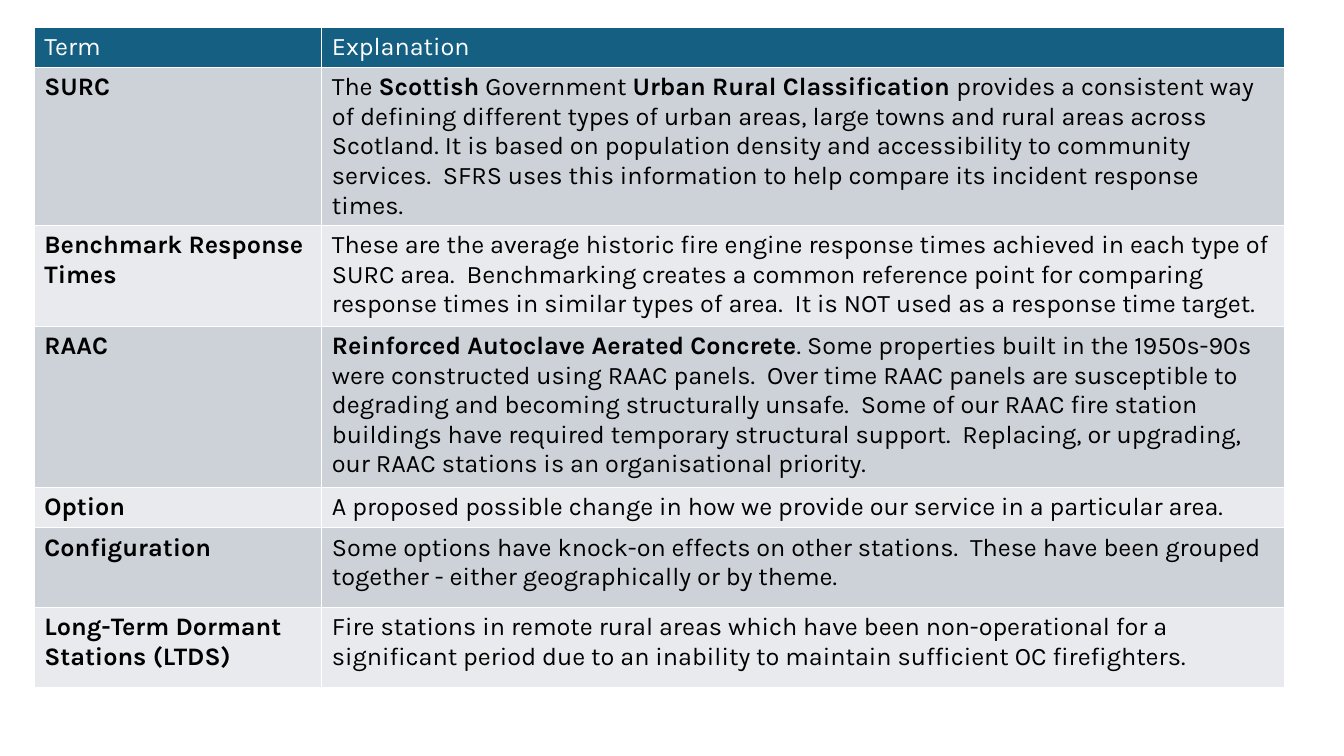
import pptx
import pptx.dml.color
import pptx.oxml
import pptx.oxml.ns
import pptx.util
from dataclasses import dataclass


@dataclass(frozen=True)
class Theme:
    font: str = "Karla"
    size: int = 18
    header_fill: str = "156082"
    header_text: str = "FFFFFF"
    bands: tuple = ("CCD2D8", "E8EAED")
    text: str = "000000"
    border: str = "FFFFFF"
    border_pt: float = 1


THEME = Theme()
WIDTH, HEIGHT = 13.33, 7.5
GLOSSARY_BOX = (0.34, 0.27, 12.4, 6.32)
TERM_SHARE = 0.23
HEADINGS = ("Term", "Explanation")
HEADER_HEIGHT = 0.4

# Row height, term, explanation; ** switches bold on and off
ENTRIES = [
    (1.34, "SURC",
     "The **Scottish** Government **Urban Rural Classification **provides a "
     "consistent way of defining different types of urban areas, large towns "
     "and rural areas across Scotland. It is based on population density and "
     "accessibility to community services.  SFRS uses this information to "
     "help compare its incident response times."),
    (1.0, "Benchmark Response Times",
     "These are the average historic fire engine response times achieved in "
     "each type of SURC area.  Benchmarking creates a common reference point "
     "for comparing response times in similar types of area.  It is NOT used "
     "as a response time target."),
    (1.6, "RAAC",
     "**Reinforced Autoclave Aerated Concrete**. Some properties built in the "
     "1950s-90s were constructed using RAAC panels.  Over time RAAC panels are "
     "susceptible to degrading and becoming structurally unsafe.  Some of our "
     "RAAC fire station buildings have required temporary structural support.  "
     "Replacing, or upgrading, our RAAC stations is an organisational "
     "priority."),
    (0.4, "Option",
     "A proposed possible change in how we provide our service in a "
     "particular area."),
    (0.79, "Configuration",
     "Some options have knock-on effects on other stations.  These have been "
     "grouped together - either geographically or by theme."),
    (0.79, "Long-Term Dormant Stations (LTDS)",
     "Fire stations in remote rural areas which have been non-operational for "
     "a significant period due to an inability to maintain sufficient OC "
     "firefighters."),
]


def rgb(value):
    return pptx.dml.color.RGBColor.from_string(value)


def add_borders(cell):
    tc_pr = cell._tc.get_or_add_tcPr()
    width = pptx.util.Pt(THEME.border_pt)
    for side in "LRTB":
        tc_pr.append(pptx.oxml.parse_xml(
            f'<a:ln{side} {pptx.oxml.ns.nsdecls("a")} w="{width}"><a:solidFill>'
            f'<a:srgbClr val="{THEME.border}"/></a:solidFill></a:ln{side}>'))


def fill_cell(cell, text, fill, color):
    add_borders(cell)
    cell.fill.solid()
    cell.fill.fore_color.rgb = rgb(fill)
    p = cell.text_frame.paragraphs[0]
    p.font.name = THEME.font
    p.font.size = pptx.util.Pt(THEME.size)
    p.font.color.rgb = rgb(color)
    for i, part in enumerate(text.split("**")):
        if part:
            r = p.add_run()
            r.text = part
            r.font.name = THEME.font
            r.font.size = pptx.util.Pt(THEME.size)
            r.font.color.rgb = rgb(color)
            r.font.bold = i % 2 == 1


def add_glossary(s, box):
    left, top, width, height = map(pptx.util.Inches, box)
    table = s.shapes.add_table(
        len(ENTRIES) + 1, len(HEADINGS), left, top, width, height).table

    # Columns and rows
    table.columns[0].width = int(width * TERM_SHARE)
    table.columns[1].width = width - table.columns[0].width
    heights = [HEADER_HEIGHT] + [entry[0] for entry in ENTRIES]
    for row, row_height in zip(table.rows, heights):
        row.height = pptx.util.Inches(row_height)

    # Header
    for col, heading in enumerate(HEADINGS):
        fill_cell(table.cell(0, col), heading,
                  THEME.header_fill, THEME.header_text)

    # Banded entries
    for i, (_, term, explanation) in enumerate(ENTRIES):
        band = THEME.bands[i % len(THEME.bands)]
        for col, text in enumerate((f"**{term}**", explanation)):
            fill_cell(table.cell(i + 1, col), text, band, THEME.text)


def main():
    prs = pptx.Presentation()
    prs.slide_width = pptx.util.Inches(WIDTH)
    prs.slide_height = pptx.util.Inches(HEIGHT)
    s = prs.slides.add_slide(prs.slide_layouts[6])
    add_glossary(s, GLOSSARY_BOX)
    prs.save("out.pptx")


if __name__ == "__main__":
    main()
